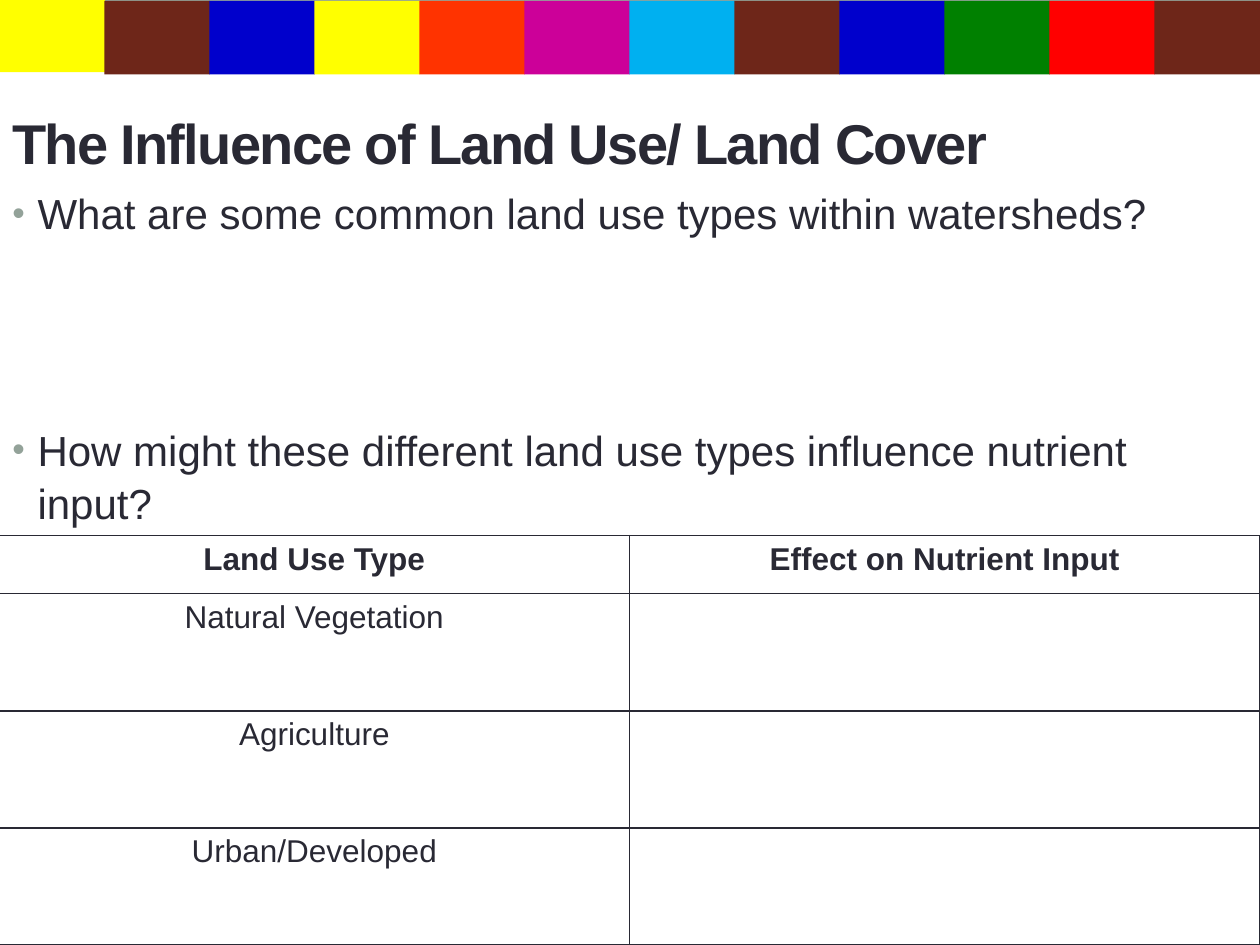
from lxml.etree import SubElement
from pptx import Presentation
from pptx.dml.color import RGBColor
from pptx.enum.shapes import MSO_SHAPE
from pptx.enum.text import MSO_ANCHOR, PP_ALIGN
from pptx.oxml.ns import qn
from pptx.util import Pt

# Content
TITLE = "The Influence of Land Use/ Land Cover"
ASKS = [  # question, space before
    ("What are some common land use types within watersheds?", 0),
    ("How might these different land use types influence nutrient input?", 105),
]
ROWS = [
    ("Land Use Type", "Effect on Nutrient Input"),
    ("Natural Vegetation", ""),
    ("Agriculture", ""),
    ("Urban/Developed", ""),
]
BANDS = ["FFFF00", "6E2619", "0000CC", "FFFF00", "FF3300", "CC0099",
         "00B0F0", "6E2619", "0000CC", "008000", "FF0000", "6E2619"]
INK, GRAY = "292934", "93A299"
WIDE, HIGH = 720, 540


def color(code):
    return RGBColor.from_string(code)


def write(para, text, size=24, bold=False, align=PP_ALIGN.LEFT, track=0):
    para.alignment = align
    run = para.add_run()
    run.text = text
    font = run.font
    font.name, font.size, font.bold = "Arial", Pt(size), bold
    font.color.rgb = color(INK)
    if track:
        run._r.get_or_add_rPr().set("spc", str(track * 100))


def block(slide, left, top, width, height, fill):
    shape = slide.shapes.add_shape(
        MSO_SHAPE.RECTANGLE, Pt(left), Pt(top), Pt(width), Pt(height))
    shape.shadow.inherit = False
    shape.fill.solid()
    shape.fill.fore_color.rgb = color(fill)
    shape.line.fill.background()


def frame(slide, top, height, anchor):
    box = slide.shapes.add_textbox(0, Pt(top), Pt(WIDE), Pt(height))
    text = box.text_frame
    text.word_wrap = True
    text.vertical_anchor = anchor
    return text


def bullet(para):
    props = para._p.get_or_add_pPr()
    props.set("marL", str(Pt(14.4)))
    props.set("indent", str(Pt(-14.4)))
    SubElement(SubElement(props, qn("a:buClr")), qn("a:srgbClr"), val=GRAY)
    SubElement(props, qn("a:buSzPct"), val="85000")
    SubElement(props, qn("a:buFont"), typeface="Arial")
    SubElement(props, qn("a:buChar"), char="•")


def border(cell):
    props = cell._tc.get_or_add_tcPr()
    for side in ("lnL", "lnR", "lnT", "lnB"):
        line = SubElement(props, qn("a:" + side), w=str(Pt(1)))
        SubElement(SubElement(line, qn("a:solidFill")), qn("a:srgbClr"), val=INK)


deck = Presentation()
deck.slide_width, deck.slide_height = Pt(WIDE), Pt(HIGH)
slide = deck.slides.add_slide(deck.slide_layouts[6])

# Header bar
block(slide, 0, 0, WIDE, 28.8, GRAY)

# Title
head = frame(slide, 42.5, 77.8, MSO_ANCHOR.MIDDLE)
write(head.paragraphs[0], TITLE, size=32, bold=True, track=-1)

# Questions
body = frame(slide, 102.2, 437.8, MSO_ANCHOR.TOP)
for i, (ask, gap) in enumerate(ASKS):
    para = body.add_paragraph() if i else body.paragraphs[0]
    para.line_spacing = 1.05
    para.space_before = Pt(gap)
    write(para, ask)
    bullet(para)

# Color bands; the first sits slightly higher
step = WIDE / len(BANDS)
for i, fill in enumerate(BANDS):
    block(slide, i * step - 0.4, 0.6 if i else -0.7, step + 0.4, 42, fill)

# Land use table
grid = slide.shapes.add_table(
    len(ROWS), 2, Pt(-0.5), Pt(306), Pt(WIDE + 0.5), Pt(234)).table
for i, row in enumerate(ROWS):
    grid.rows[i].height = Pt(66.9 if i else 33.3)
    for j, text in enumerate(row):
        cell = grid.cell(i, j)
        border(cell)
        cell.fill.background()
        if text:
            write(cell.text_frame.paragraphs[0], text, size=18,
                  bold=i == 0, align=PP_ALIGN.CENTER)

deck.save("out.pptx")
